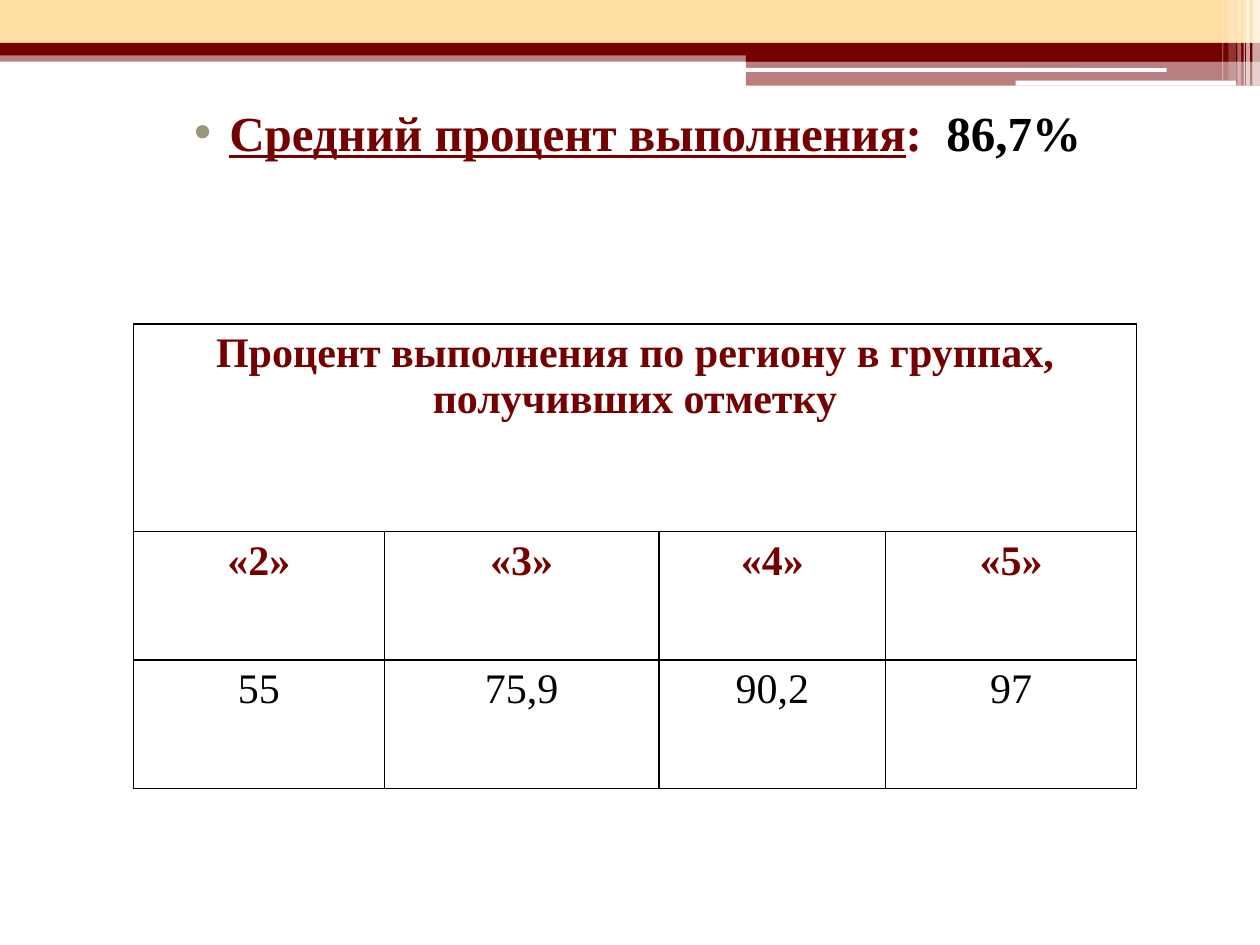
from lxml.etree import SubElement
from pptx import Presentation
from pptx.dml.color import RGBColor
from pptx.enum.shapes import MSO_SHAPE
from pptx.enum.text import MSO_ANCHOR, MSO_AUTO_SIZE, PP_ALIGN
from pptx.oxml.ns import qn
from pptx.util import Inches, Pt

MAROON, SAND, WHITE, BLACK = "740000", "FFDEA4", "FFFFFF", "000000"


def paint(fill, color, opacity=100):
    """Make a fill solid; opacity is in percent."""
    fill.solid()
    fill.fore_color.rgb = RGBColor.from_string(color)
    if opacity < 100:
        color_node = fill._xPr.find(qn("a:solidFill"))[0]
        SubElement(color_node, qn("a:alpha"), val=str(opacity * 1000))


def add_text(para, text, size=24, color=MAROON, bold=True, underline=False):
    para.alignment = PP_ALIGN.CENTER
    span = para.add_run()
    span.text = text
    span.font.name = "Times New Roman"
    span.font.size = Pt(size)
    span.font.bold = bold
    span.font.underline = underline
    span.font.color.rgb = RGBColor.from_string(color)


deck = Presentation()
deck.slide_width, deck.slide_height = Inches(10), Inches(7.5)
page = deck.slides.add_slide(deck.slide_layouts.get_by_name("Title and Content"))
title, body = page.placeholders
title.element.getparent().remove(title.element)

# Header bands, then the pale stripes over their right end
RECT, ROUND = MSO_SHAPE.RECTANGLE, MSO_SHAPE.ROUNDED_RECTANGLE
bands = [
    (RECT, 0, 0.4, 10, 0.09, MAROON, 50),
    (RECT, 0, 0, 10, 0.34, SAND, 100),
    (RECT, 0, 0.34, 10, 0.1, MAROON, 100),
    (RECT, 5.92, 0.39, 4.08, 0.1, MAROON, 100),
    (RECT, 5.92, 0.48, 4.08, 0.2, MAROON, 50),
    (ROUND, 5.91, 0.54, 3.35, 0.03, WHITE, 100),
    (ROUND, 8.06, 0.64, 1.75, 0.04, WHITE, 100),
]
stripes = [
    (9.94, 0.06, 0.68, 65), (9.89, 0.03, 0.68, 65), (9.87, 0.01, 0.68, 60),
    (9.82, 0.03, 0.68, 40), (9.75, 0.06, 0.64, 20), (9.7, 0.01, 0.64, 30),
]
bands += [(RECT, left, 0, width, height, WHITE, opacity)
          for left, width, height, opacity in stripes]
for kind, left, top, width, height, color, opacity in bands:
    band = page.shapes.add_shape(
        kind, Inches(left), Inches(top), Inches(width), Inches(height))
    band.shadow.inherit = False
    band.line.fill.background()
    paint(band.fill, color, opacity)

# Bulleted heading
body.left, body.top = Inches(0.5), Inches(0.76)
body.width, body.height = Inches(9), Inches(6.43)
frame = body.text_frame
frame.word_wrap = True
frame.auto_size = MSO_AUTO_SIZE.NONE
frame.vertical_anchor = MSO_ANCHOR.TOP
heading = frame.paragraphs[0]
heading.space_before = Pt(3)
add_text(heading, "Средний процент выполнения", size=28, underline=True)
add_text(heading, ":  ", size=28)
add_text(heading, "86,7%", size=28, color=BLACK)
layout = heading._p.get_or_add_pPr()
layout.set("marL", str(Inches(0.4)))
layout.set("indent", str(Inches(-0.28)))
bullet_color = SubElement(layout, qn("a:buClr"))
SubElement(bullet_color, qn("a:srgbClr"), val="99987F")
SubElement(layout, qn("a:buFont"), typeface="Arial")
SubElement(layout, qn("a:buChar"), char="•")

# Results by mark
marks = ["«2»", "«3»", "«4»", "«5»"]
percents = ["55", "75,9", "90,2", "97"]
column_widths = [1.99, 2.18, 1.8, 1.99]
row_heights = [1.65, 1.02, 1.02]
table = page.shapes.add_table(
    len(row_heights), len(column_widths), Inches(1.06), Inches(2.57),
    Inches(sum(column_widths)), Inches(sum(row_heights))).table
table.first_row = table.horz_banding = False
for column, width in zip(table.columns, column_widths):
    column.width = Inches(width)
for row, height in zip(table.rows, row_heights):
    row.height = Inches(height)

for cell in table.iter_cells():
    properties = cell._tc.get_or_add_tcPr()
    for side in ("a:lnL", "a:lnR", "a:lnT", "a:lnB"):
        border = SubElement(properties, qn(side), w=str(Pt(1)))
        border_fill = SubElement(border, qn("a:solidFill"))
        SubElement(border_fill, qn("a:srgbClr"), val=BLACK)
    paint(cell.fill, WHITE)

table.cell(0, 0).merge(table.cell(0, len(marks) - 1))
add_text(table.cell(0, 0).text_frame.paragraphs[0],
         "Процент выполнения по региону в группах, получивших отметку")
for index, (mark, percent) in enumerate(zip(marks, percents)):
    add_text(table.cell(1, index).text_frame.paragraphs[0], mark)
    add_text(table.cell(2, index).text_frame.paragraphs[0], percent,
             color=BLACK, bold=False)

deck.save("out.pptx")
